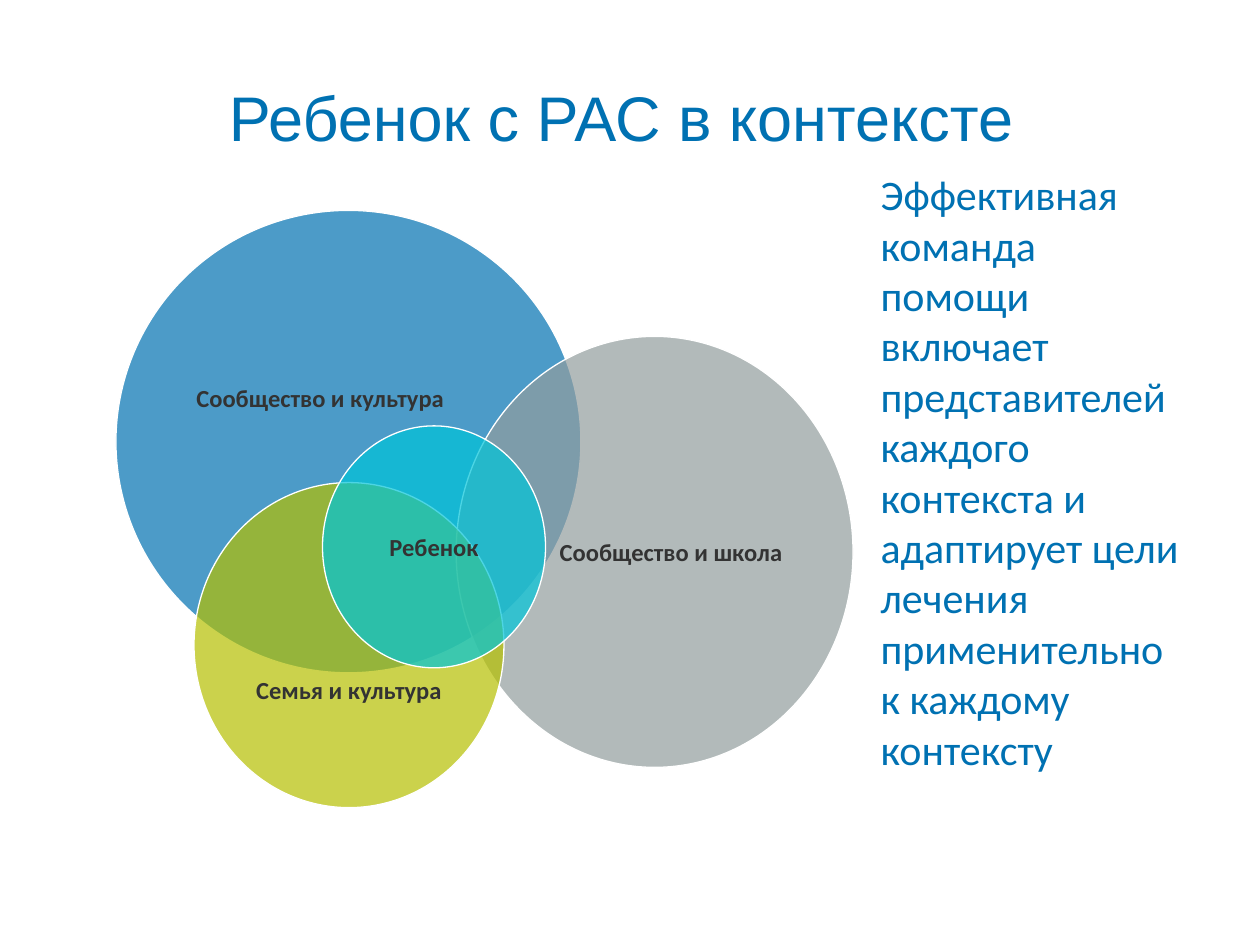
from lxml import etree
from pptx import Presentation
from pptx.dml.color import RGBColor
from pptx.enum.shapes import MSO_SHAPE
from pptx.enum.text import MSO_ANCHOR, MSO_AUTO_SIZE, PP_ALIGN
from pptx.oxml.ns import qn
from pptx.util import Inches, Pt

OVAL = MSO_SHAPE.OVAL
TOP, MIDDLE = MSO_ANCHOR.TOP, MSO_ANCHOR.MIDDLE
LEFT, CENTER, RIGHT = PP_ALIGN.LEFT, PP_ALIGN.CENTER, PP_ALIGN.RIGHT
GROW = MSO_AUTO_SIZE.SHAPE_TO_FIT_TEXT

TITLE = "Ребенок с РАС в контексте "
SUMMARY = (
    "Эффективная команда помощи включает представителей каждого контекста "
    "и адаптирует цели лечения применительно к каждому контексту"
)
CIRCLES = [
    {"label": "Сообщество и культура", "area": (0.92, 1.67, 3.69, 3.67),
     "color": "0071B2", "align": LEFT, "shift": -0.35},
    {"label": "Сообщество и школа", "area": (3.62, 2.67, 3.15, 3.42),
     "color": "929D9E", "align": RIGHT, "shift": 0},
    {"label": "Семья и культура", "area": (1.54, 3.83, 2.46, 2.58),
     "color": "B5C000", "align": CENTER, "shift": 0.35},
    {"label": "Ребенок", "area": (2.56, 3.38, 1.77, 1.92),
     "color": "00C4D9", "align": CENTER, "shift": 0},
]
THEME = {
    "accent": "0071B2", "label": "333333", "outline": "FFFFFF",
    "title_font": "Arial", "body_font": "Calibri",
    "title_size": 36, "body_size": 24, "label_size": 14,
    "outline_width": 0.75, "opacity": 70, "margin": 0.05,
}


def write_text(box, text, *, size, color, font=THEME["body_font"], bold=False,
               align=LEFT, anchor=TOP, wrap=True, shift=0):
    frame = box.text_frame
    frame.word_wrap = wrap
    frame.vertical_anchor = anchor
    frame.margin_top = Inches(THEME["margin"] + max(2 * shift, 0))
    frame.margin_bottom = Inches(THEME["margin"] + max(-2 * shift, 0))
    para = frame.paragraphs[0]
    para.alignment = align
    span = para.add_run()
    span.text = text
    span.font.name = font
    span.font.size = Pt(size)
    span.font.bold = bold
    span.font.color.rgb = RGBColor.from_string(color)


def add_circle(group, circle):
    oval = group.shapes.add_shape(OVAL, *map(Inches, circle["area"]))
    oval.shadow.inherit = False
    oval.fill.solid()
    oval.fill.fore_color.rgb = RGBColor.from_string(circle["color"])
    color = oval.element.spPr.find(qn("a:solidFill")).find(qn("a:srgbClr"))
    etree.SubElement(color, qn("a:alpha")).set("val", str(THEME["opacity"] * 1000))
    oval.line.color.rgb = RGBColor.from_string(THEME["outline"])
    oval.line.width = Pt(THEME["outline_width"])
    write_text(oval, circle["label"], size=THEME["label_size"],
               color=THEME["label"], bold=True, align=circle["align"],
               anchor=MIDDLE, wrap=False, shift=circle["shift"])


def main():
    deck = Presentation()
    deck.slide_width, deck.slide_height = Inches(10), Inches(7.5)
    page = deck.slides.add_slide(deck.slide_layouts[6])

    title = page.shapes.add_textbox(*map(Inches, (0.5, 0.3, 9, 1.25)))
    write_text(title, TITLE, size=THEME["title_size"], color=THEME["accent"],
               font=THEME["title_font"], align=CENTER, anchor=MIDDLE)

    summary = page.shapes.add_textbox(*map(Inches, (6.89, 1.29, 2.61, 4.95)))
    write_text(summary, SUMMARY, size=THEME["body_size"], color=THEME["accent"])
    summary.text_frame.auto_size = GROW

    diagram = page.shapes.add_group_shape()
    for circle in CIRCLES:
        add_circle(diagram, circle)

    deck.save("out.pptx")


if __name__ == "__main__":
    main()
